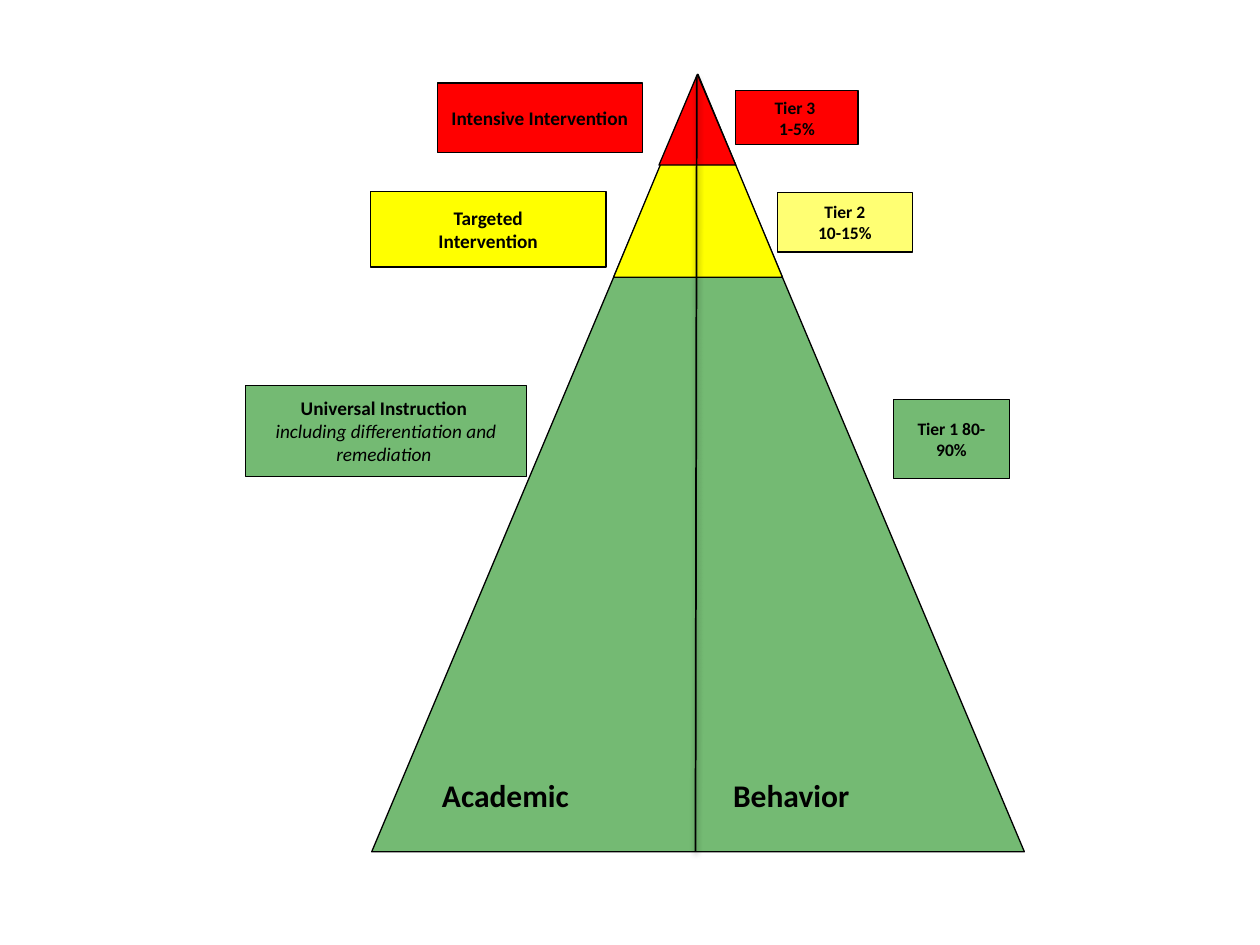
from dataclasses import dataclass

from lxml import etree
from pptx import Presentation
from pptx import util as u
from pptx.dml import color
from pptx.enum import shapes, text
from pptx.oxml import ns

BLACK, GREEN, YELLOW, RED = "000000", "028200", "FFFF00", "FF0000"
FONT = "Calibri"
TINT = 55


@dataclass(frozen=True)
class Line:
    text: str
    bold: bool = True


@dataclass(frozen=True)
class Panel:
    left: float
    top: float
    width: float
    height: float
    fill: str
    opacity: int = 100
    lines: tuple[Line, ...] = ()
    size: int = 11


@dataclass(frozen=True)
class Caption:
    left: float
    text: str


TRIANGLES = (
    Panel(2.95, 0.61, 5.18, 6.15, GREEN, TINT),
    Panel(4.87, 0.59, 1.34, 1.61, YELLOW),
    Panel(5.23, 0.59, 0.61, 0.72, RED),
)
TIERS = (
    Panel(6.17, 1.53, 1.07, 0.47, YELLOW, TINT, (Line("Tier 2"), Line("10-15%")), 10),
    Panel(7.09, 3.17, 0.92, 0.63, GREEN, TINT, (Line("Tier 1 80-90%"),), 10),
    Panel(5.84, 0.72, 0.97, 0.43, RED, 100, (Line("Tier 3 "), Line("1-5%")), 10),
)
INTERVENTIONS = (
    Panel(1.95, 3.06, 2.23, 0.72, GREEN, TINT,
          (Line("Universal Instruction "),
           Line("including differentiation and remediation ", bold=False))),
    Panel(2.94, 1.52, 1.87, 0.6, YELLOW, 100, (Line("Targeted"), Line("Intervention"))),
    Panel(3.47, 0.66, 1.63, 0.55, RED, 100, (Line("Intensive Intervention"),)),
)
CAPTIONS = (Caption(5.72, "Behavior"), Caption(3.41, "Academic"))


def paint(target, value: str) -> None:
    target.rgb = color.RGBColor.from_string(value)


def set_font(font, size: int, bold: bool = True, italic: bool = False) -> None:
    font.name = FONT
    font.size = u.Pt(size)
    font.bold = bold
    font.italic = italic
    paint(font.color, BLACK)


def set_opacity(shape, percent: int) -> None:
    fill_color = shape.fill._xPr.find(ns.qn("a:solidFill"))[0]
    etree.SubElement(fill_color, ns.qn("a:alpha"), val=str(percent * 1000))


def add_panel(slide, preset, panel: Panel) -> None:
    shape = slide.shapes.add_shape(
        preset, u.Inches(panel.left), u.Inches(panel.top),
        u.Inches(panel.width), u.Inches(panel.height))
    shape.shadow.inherit = False
    shape.fill.solid()
    paint(shape.fill.fore_color, panel.fill)
    if panel.opacity < 100:
        set_opacity(shape, panel.opacity)
    paint(shape.line.color, BLACK)
    shape.line.width = u.Pt(0.75)

    frame = shape.text_frame
    frame.word_wrap = True
    frame.vertical_anchor = text.MSO_ANCHOR.MIDDLE
    for index, line in enumerate(panel.lines):
        paragraph = frame.add_paragraph() if index else frame.paragraphs[0]
        paragraph.text = line.text
        paragraph.alignment = text.PP_ALIGN.CENTER
        set_font(paragraph.font, panel.size, line.bold, not line.bold)


def add_divider(slide) -> None:
    divider = slide.shapes.add_connector(
        shapes.MSO_CONNECTOR.STRAIGHT,
        u.Inches(5.53), u.Inches(0.6), u.Inches(5.52), u.Inches(6.76))
    paint(divider.line.color, BLACK)
    divider.line.width = u.Pt(1)
    effects = etree.SubElement(divider._element.spPr, ns.qn("a:effectLst"))
    shadow = etree.SubElement(
        effects, ns.qn("a:outerShdw"), blurRad=str(u.Pt(3.1)), dist=str(u.Pt(1.6)),
        dir=str(90 * 60000), rotWithShape="0")
    shade = etree.SubElement(shadow, ns.qn("a:srgbClr"), val=BLACK)
    etree.SubElement(shade, ns.qn("a:alpha"), val=str(38 * 1000))


def add_caption(slide, caption: Caption) -> None:
    box = slide.shapes.add_textbox(
        u.Inches(caption.left), u.Inches(6.11), u.Inches(1.86), u.Inches(0.54))
    box.text_frame.word_wrap = True
    paragraph = box.text_frame.paragraphs[0]
    paragraph.text = caption.text
    set_font(paragraph.font, 18)


def main() -> None:
    presentation = Presentation()
    presentation.slide_width = u.Inches(10)
    presentation.slide_height = u.Inches(7.5)
    slide = presentation.slides.add_slide(presentation.slide_layouts[6])

    for triangle in TRIANGLES:
        add_panel(slide, shapes.MSO_SHAPE.ISOSCELES_TRIANGLE, triangle)
    for tier in TIERS:
        add_panel(slide, shapes.MSO_SHAPE.RECTANGLE, tier)
    add_divider(slide)
    for caption in CAPTIONS:
        add_caption(slide, caption)
    for intervention in INTERVENTIONS:
        add_panel(slide, shapes.MSO_SHAPE.RECTANGLE, intervention)

    presentation.save("out.pptx")


if __name__ == "__main__":
    main()
